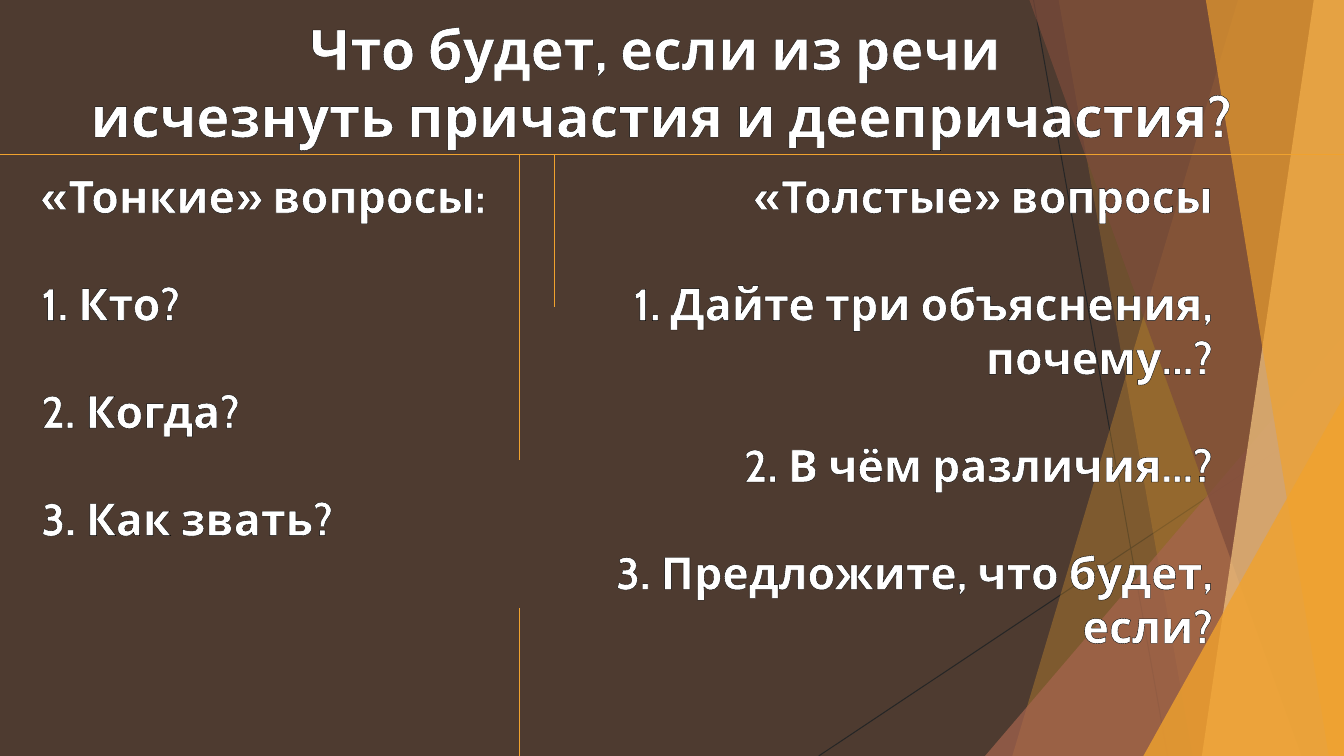
from lxml.etree import SubElement
from pptx import Presentation
from pptx.dml.color import RGBColor
from pptx.enum.shapes import MSO_CONNECTOR as CONNECTOR, MSO_SHAPE as SHAPE
from pptx.enum.text import MSO_AUTO_SIZE as AUTO_SIZE, PP_ALIGN as ALIGN
from pptx.oxml import parse_xml
from pptx.oxml.ns import nsdecls, qn
from pptx.util import Inches, Pt

WIDTH, HEIGHT = 13.33, 7.5
BROWN, AMBER, WHITE, DARK = "4E3B30", "F0A22E", "FFFFFF", "262626"
TEXT_OUTLINE = (f'<a:ln {nsdecls("a")} w="9525"><a:solidFill>'
                '<a:srgbClr val="000000"/></a:solidFill></a:ln>')


def rgb(color):
    return RGBColor.from_string(color)


def add_line(start, end, color, weight):
    line = slide.shapes.add_connector(CONNECTOR.STRAIGHT, *map(Inches, start + end))
    line.line.color.rgb = rgb(color)
    line.line.width = Pt(weight)
    SubElement(line._element.spPr, qn("a:effectLst"))


prs = Presentation()
prs.slide_width, prs.slide_height = Inches(WIDTH), Inches(HEIGHT)
slide = prs.slides.add_slide(prs.slide_layouts[6])
slide.background.fill.solid()
slide.background.fill.fore_color.rgb = rgb(BROWN)

# Thin dark lines behind the coloured facets
add_line((10.25, 0), (11.58, HEIGHT), DARK, 0.75)
add_line((WIDTH, 4.03), (8.12, HEIGHT), DARK, 0.75)

# Facets reach the right edge: kind, top, left edge, colour, opacity in percent.
# A band's left edge is (x at the top, x at the bottom); a corner has one x.
facets = [
    ("band", 0, (12.28, 10.04), AMBER, 30),
    ("band", 0, (10.5, 11.83), AMBER, 20),
    ("corner", 3.33, 9.77, "A5644E", 72),
    ("band", 0, (10.21, 12.91), "7C4B3B", 70),
    ("band", 0, (13.03, 11.92), "F6C782", 70),
    ("band", 0, (11.96, 13.18), AMBER, 65),
    ("corner", 3.93, 11.34, AMBER, 80),
]
for kind, top, left, color, opacity in facets:
    if kind == "band":
        top_x, bottom_x = left
        outline = slide.shapes.build_freeform(Inches(top_x), Inches(top))
        corners = [(WIDTH, top), (WIDTH, HEIGHT), (bottom_x, HEIGHT)]
        outline.add_line_segments([(Inches(x), Inches(y)) for x, y in corners])
        facet = outline.convert_to_shape()
    else:
        facet = slide.shapes.add_shape(
            SHAPE.ISOSCELES_TRIANGLE, Inches(left), Inches(top),
            Inches(WIDTH - left), Inches(HEIGHT - top))
        facet.adjustments[0] = 1
    facet.shadow.inherit = False
    facet.line.fill.background()
    facet.fill.solid()
    facet.fill.fore_color.rgb = rgb(color)
    tint = facet._element.spPr.find(qn("a:solidFill"))[0]
    SubElement(tint, qn("a:alpha"), val=str(opacity * 1000))

# Title and the two columns: place, alignment, size, gap between paragraphs, wording
texts = [
    ((0, 0.09, 13.12, 1.45), ALIGN.CENTER, 40, 0,
     ["Что будет, если из речи ", "исчезнуть причастия и деепричастия?"]),
    ((0.31, 1.62, 6.11, 3.87), ALIGN.LEFT, 32, 38.4,
     ["«Тонкие» вопросы:", "1. Кто?", "2. Когда?", "3. Как звать?"]),
    ((5.49, 1.62, 6.64, 4.95), ALIGN.RIGHT, 32, 38.4,
     ["«Толстые» вопросы", "1. Дайте три объяснения, почему…?",
      "2. В чём различия…?", "3. Предложите, что будет, если?"]),
]
for place, alignment, size, gap, wording in texts:
    frame = slide.shapes.add_textbox(*map(Inches, place)).text_frame
    frame.word_wrap = True
    frame.auto_size = AUTO_SIZE.SHAPE_TO_FIT_TEXT
    font_format = {"name": "Cabin", "size": Pt(size), "bold": True}
    for index, words in enumerate(wording):
        paragraph = frame.add_paragraph() if index else frame.paragraphs[0]
        paragraph.alignment = alignment
        paragraph.space_before = Pt(gap if index else 0)
        run = paragraph.add_run()
        run.text = words
        for attribute, value in font_format.items():
            setattr(run.font, attribute, value)
        run.font.color.rgb = rgb(WHITE)
        run._r.get_or_add_rPr().insert(0, parse_xml(TEXT_OUTLINE))

# Amber rules under the title and between the columns
rule_y, divider_x = 1.53, 5.15
for start, end in [
    ((0, rule_y), (WIDTH, rule_y)),
    ((divider_x, rule_y), (divider_x, 4.56)),
    ((5.5, rule_y), (5.5, 3.05)),
    ((divider_x, 6.03), (divider_x, HEIGHT)),
]:
    add_line(start, end, AMBER, 1)

prs.save("out.pptx")
